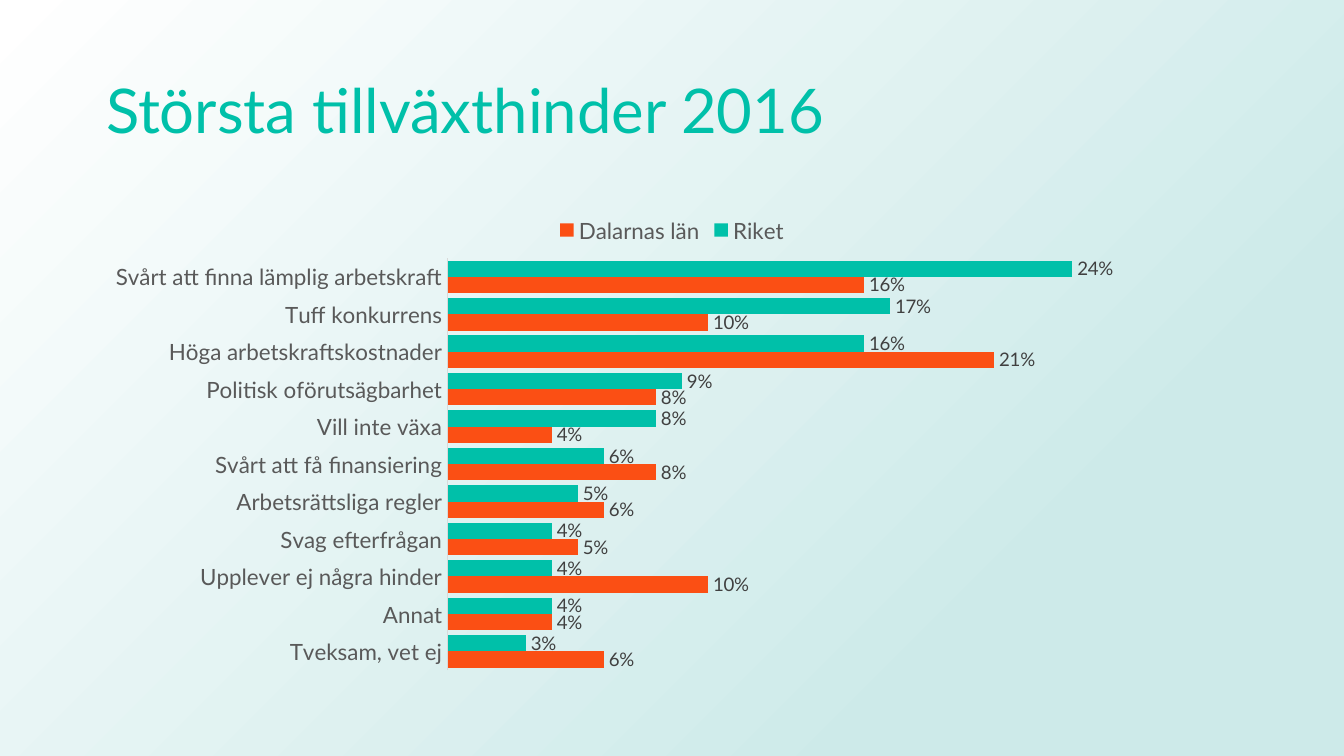
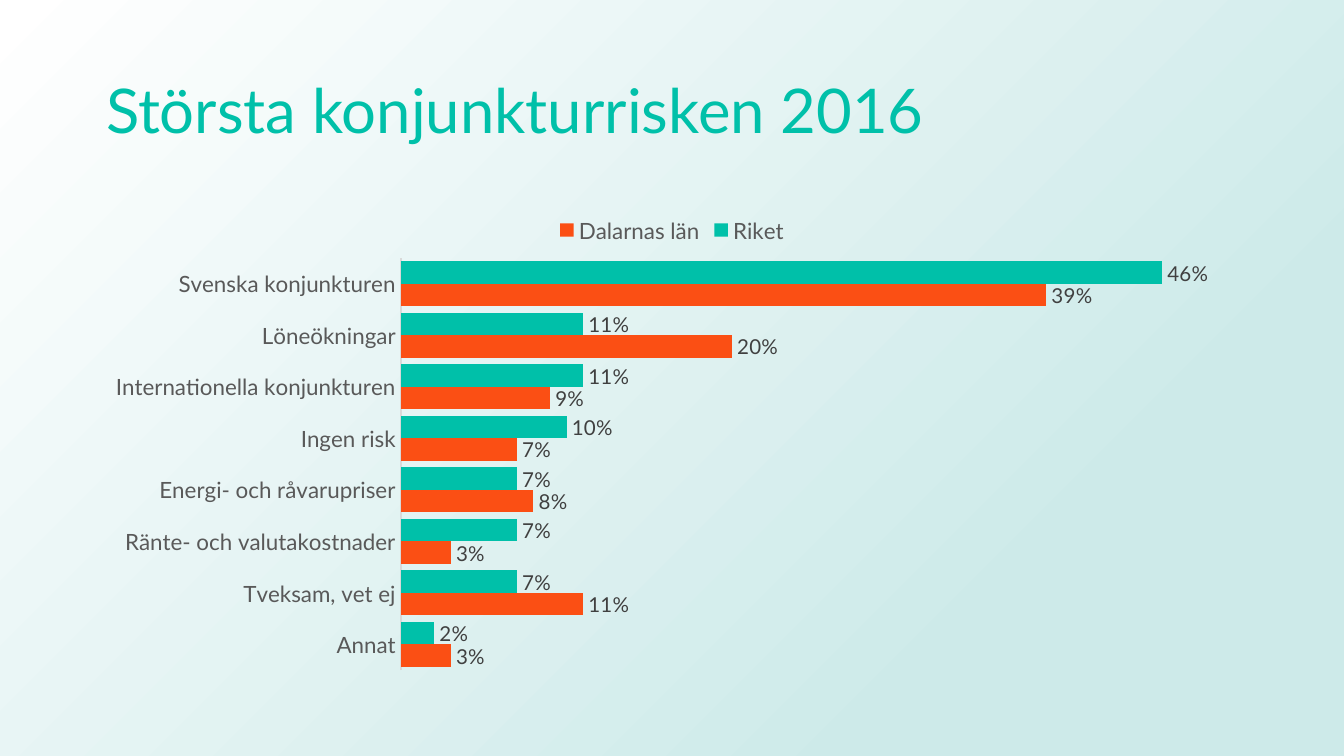
from lxml.etree import SubElement
from pptx import Presentation
from pptx.chart.data import CategoryChartData
from pptx.dml.color import RGBColor
from pptx.enum.chart import XL_CHART_TYPE as ChartType
from pptx.enum.chart import XL_LABEL_POSITION as LabelPosition
from pptx.enum.chart import XL_LEGEND_POSITION as LegendPosition
from pptx.enum.chart import XL_TICK_LABEL_POSITION as TickLabels
from pptx.enum.chart import XL_TICK_MARK as TickMark
from pptx.enum.shapes import MSO_SHAPE as Preset
from pptx.enum.text import MSO_ANCHOR as Anchor
from pptx.enum.text import MSO_AUTO_SIZE as AutoSize
from pptx.enum.text import PP_ALIGN as Align
from pptx.oxml.ns import qn
from pptx.util import Cm, Pt

# Each row: answer, share in the whole country, share in Dalarna (percent)
SURVEYS = [
    dict(
        title="Största tillväxthinder 2016",
        label_size=10,
        axis_max=0.3,
        answers=[
            ("Svårt att finna lämplig arbetskraft", 24, 16),
            ("Tuff konkurrens", 17, 10),
            ("Höga arbetskraftskostnader", 16, 21),
            ("Politisk oförutsägbarhet", 9, 8),
            ("Vill inte växa", 8, 4),
            ("Svårt att få finansiering", 6, 8),
            ("Arbetsrättsliga regler", 5, 6),
            ("Svag efterfrågan", 4, 5),
            ("Upplever ej några hinder", 4, 10),
            ("Annat", 4, 4),
            ("Tveksam, vet ej", 3, 6),
        ],
    ),
    dict(
        title="Största konjunkturrisken 2016",
        label_size=11,
        axis_max=0.5,
        answers=[
            ("Svenska konjunkturen", 46, 39),
            ("Löneökningar", 11, 20),
            ("Internationella konjunkturen", 11, 9),
            ("Ingen risk", 10, 7),
            ("Energi- och råvarupriser", 7, 8),
            ("Ränte- och valutakostnader", 7, 3),
            ("Tveksam, vet ej", 7, 11),
            ("Annat", 2, 3),
        ],
    ),
]

TEAL, ORANGE = "00C0A9", "FB4F14"
GREY, DARK_GREY, LIGHT_GREY = "595959", "404040", "D9D9D9"
REGIONS = [("Riket", TEAL), ("Dalarnas län", ORANGE)]
BACKDROP_STOPS = [(0.23, "CDEAE9"), (1, "FFFFFF")]

SLIDE_WIDTH, SLIDE_HEIGHT = Cm(25.4), Cm(14.29)
MARGIN = Cm(1.75)
CONTENT_WIDTH = SLIDE_WIDTH - 2 * MARGIN
TITLE_TOP, TITLE_HEIGHT = Cm(0.76), Cm(2.77)
CHART_TOP, CHART_HEIGHT = Cm(3.81), Cm(9.04)


def rgb(color):
    return RGBColor.from_string(color)


def style_font(font, size, color, name="Lato"):
    font.size, font.name, font.bold = Pt(size), name, False
    font.color.rgb = rgb(color)


def write(frame, text, size, color, align=Align.LEFT, spacing=0.9):
    frame.word_wrap = True
    frame.auto_size = AutoSize.NONE
    frame.vertical_anchor = Anchor.MIDDLE
    paragraph = frame.paragraphs[0]
    paragraph.alignment, paragraph.line_spacing = align, spacing
    run = paragraph.add_run()
    run.text = text
    style_font(run.font, size, color)


def add_backdrop(slide, master):
    """Put a gradient that spreads from the bottom right corner on the master."""
    backdrop = slide.shapes.add_shape(Preset.RECTANGLE, 0, 0, SLIDE_WIDTH, SLIDE_HEIGHT)
    backdrop.shadow.inherit = False
    backdrop.line.fill.background()
    backdrop.fill.gradient()
    for stop, (position, color) in zip(backdrop.fill.gradient_stops, BACKDROP_STOPS):
        stop.position, stop.color.rgb = position, rgb(color)
    gradient = backdrop._element.spPr.find(qn("a:gradFill"))
    gradient.remove(gradient.find(qn("a:lin")))
    spread = SubElement(gradient, qn("a:path"), {"path": "circle"})
    SubElement(spread, qn("a:fillToRect"), {"l": "100000", "t": "100000"})
    master.shapes[0]._element.addprevious(backdrop._element)


def add_title(slide, text):
    title = slide.shapes.title
    title.left, title.top = MARGIN, TITLE_TOP
    title.width, title.height = CONTENT_WIDTH, TITLE_HEIGHT
    write(title.text_frame, text, size=33, color=TEAL)


def add_survey_chart(slide, answers, label_size, axis_max):
    names, *shares = zip(*answers)
    survey = CategoryChartData(number_format="0%")
    survey.categories = names
    for (region, _), percents in zip(REGIONS, shares):
        survey.add_series(region, [percent / 100 for percent in percents])
    chart = slide.shapes.add_chart(
        ChartType.BAR_CLUSTERED, MARGIN, CHART_TOP, CONTENT_WIDTH, CHART_HEIGHT, survey
    ).chart
    chart.has_title = False
    style_font(chart.font, 10, "000000", "Calibri")

    chart.has_legend = True
    chart.legend.position = LegendPosition.TOP
    chart.legend.include_in_layout = False
    style_font(chart.legend.font, 12, GREY)

    answer_axis = chart.category_axis
    answer_axis.reverse_order = True
    answer_axis.major_tick_mark = answer_axis.minor_tick_mark = TickMark.NONE
    answer_axis.tick_label_position = TickLabels.NEXT_TO_AXIS
    answer_axis.format.line.color.rgb = rgb(LIGHT_GREY)
    answer_axis.format.line.width = Pt(0.75)
    style_font(answer_axis.tick_labels.font, 12, GREY)

    share_axis = chart.value_axis
    share_axis.visible = share_axis.has_major_gridlines = False
    share_axis.minimum_scale, share_axis.maximum_scale = 0, axis_max
    share_axis.tick_labels.number_format = "0%"
    share_axis.tick_labels.number_format_is_linked = False

    bars = chart.plots[0]
    bars.gap_width, bars.overlap, bars.vary_by_categories = 30, 0, False
    for series, (_, color) in zip(bars.series, REGIONS):
        series.format.fill.solid()
        series.format.fill.fore_color.rgb = rgb(color)
        series.invert_if_negative = False
        labels = series.data_labels
        labels.show_value = True
        labels.position = LabelPosition.OUTSIDE_END
        labels.number_format, labels.number_format_is_linked = "0%", False
        style_font(labels.font, label_size, DARK_GREY)


def main():
    deck = Presentation()
    deck.slide_width, deck.slide_height = SLIDE_WIDTH, SLIDE_HEIGHT
    title_only = deck.slide_layouts[5]
    for survey in SURVEYS:
        slide = deck.slides.add_slide(title_only)
        add_title(slide, survey["title"])
        add_survey_chart(
            slide, survey["answers"], survey["label_size"], survey["axis_max"]
        )
    add_backdrop(deck.slides[0], deck.slide_master)
    deck.save("out.pptx")


if __name__ == "__main__":
    main()
